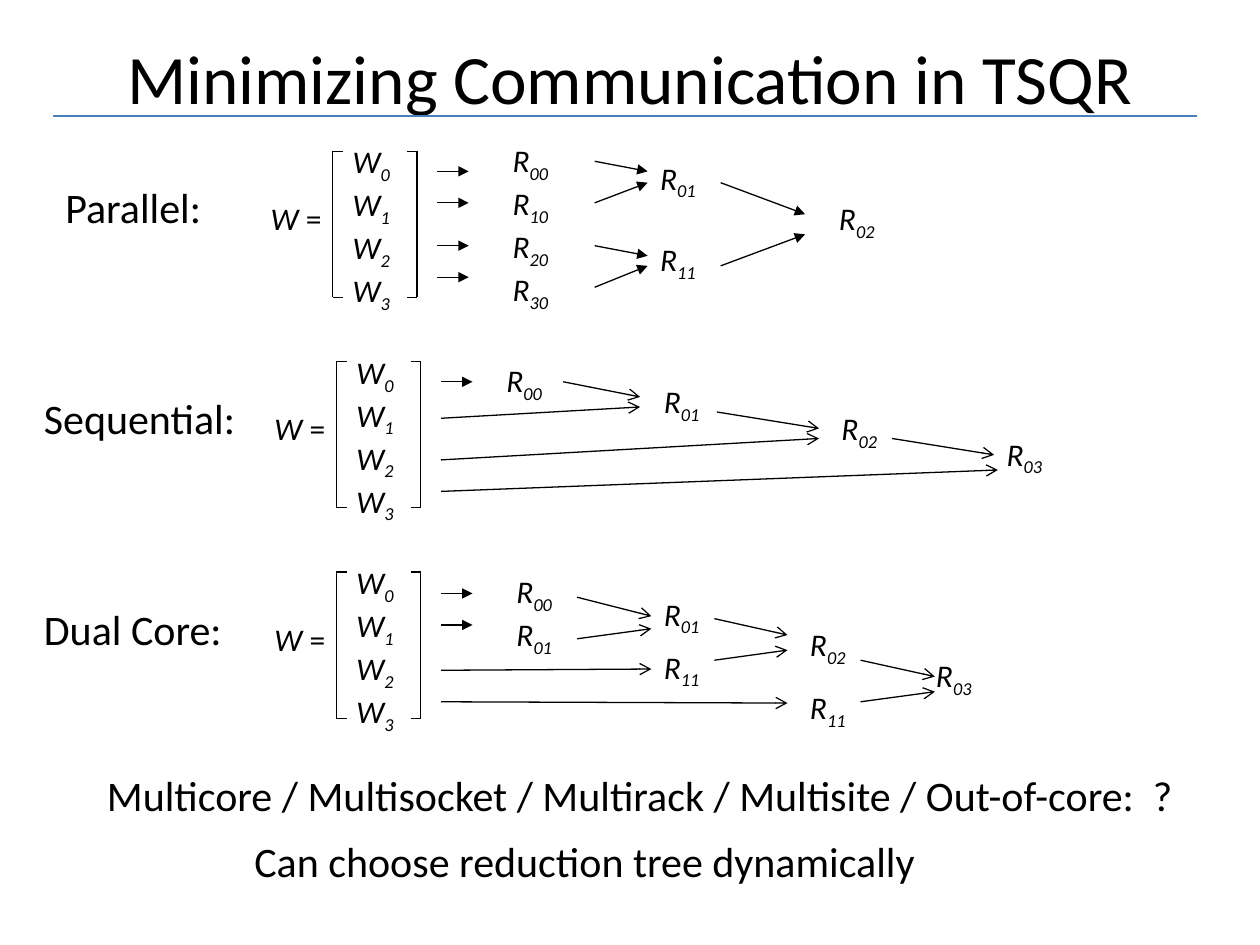
import pptx
import pptx.dml.color
import pptx.enum.shapes
import pptx.enum.text
import pptx.oxml
import pptx.oxml.ns
import pptx.util
from pptx.util import Inches

FONT = "Calibri"
BLACK = "000000"
RULE_COLOR = "4B7EBC"
TITLE = "Minimizing Communication in TSQR"

# Each panel: label box (left, top, width), top left corner of the bracket,
# factors (left, top, subscripts), and arrows (from x, from y, to x, to y) by head.
PANELS = [
    {
        "label": ("Parallel:", 0.42, 1.39, 1.64),
        "bracket": (2.64, 1.2),
        "factors": [
            (3.97, 1.07, ["00", "10", "20", "30"]),
            (5.14, 1.21, ["01"]),
            (5.14, 1.86, ["11"]),
            (6.56, 1.53, ["02"]),
        ],
        "arrows": {
            "triangle": [
                (3.47, 1.36, 3.72, 1.36), (3.47, 1.61, 3.72, 1.61),
                (3.47, 1.95, 3.72, 1.95), (3.47, 2.2, 3.72, 2.2),
                (4.72, 1.28, 5.14, 1.36), (4.72, 1.61, 5.14, 1.45),
                (4.72, 1.95, 5.14, 2.03), (4.72, 2.28, 5.14, 2.11),
                (5.72, 1.45, 6.39, 1.7), (5.72, 2.11, 6.39, 1.86),
            ],
        },
    },
    {
        "label": ("Sequential:", 0.25, 3.07, 2),
        "bracket": (2.67, 2.87),
        "factors": [
            (3.92, 2.82, ["00"]),
            (5.17, 2.98, ["01"]),
            (6.58, 3.2, ["02"]),
            (7.89, 3.4, ["03"]),
        ],
        "arrows": {
            "triangle": [(3.5, 3.03, 3.75, 3.03)],
            "arrow": [
                (4.47, 3.03, 5.08, 3.15), (3.5, 3.32, 5.08, 3.23),
                (5.69, 3.27, 6.5, 3.4), (3.5, 3.65, 6.5, 3.48),
                (7.08, 3.48, 7.89, 3.61), (3.5, 3.9, 7.92, 3.73),
            ],
        },
    },
    {
        "label": ("Dual Core:", 0.25, 4.74, 2.08),
        "bracket": (2.67, 4.54),
        "factors": [
            (4, 4.49, ["00", "01"]),
            (5.17, 4.67, ["01"]),
            (5.17, 5.09, ["11"]),
            (6.33, 4.91, ["02"]),
            (6.33, 5.41, ["11"]),
            (7.33, 5.16, ["03"]),
        ],
        "arrows": {
            "triangle": [(3.5, 4.71, 3.75, 4.71), (3.5, 4.96, 3.75, 4.96)],
            "arrow": [
                (4.58, 4.74, 5.17, 4.89), (4.58, 5.07, 5.17, 4.99),
                (3.5, 5.32, 5.17, 5.31), (3.5, 5.57, 6.25, 5.58),
                (5.67, 4.91, 6.25, 5.04), (5.67, 5.24, 6.25, 5.16),
                (6.83, 5.24, 7.42, 5.37), (6.83, 5.57, 7.42, 5.49),
            ],
        },
    },
]

CLOSING_LINES = [
    ("Can choose reduction tree dynamically", 1.89, 6.58, 5.5, "CENTER"),
    ("Multicore / Multisocket / Multirack / Multisite / Out-of-core:  ?",
     0.75, 6.06, 8.69, "LEFT"),
]

BRACKET_WIDTH, BRACKET_HEIGHT, BRACKET_ARM = 0.67, 1.16, 0.08


def rgb(color):
    return pptx.dml.color.RGBColor.from_string(color)


def add_run(paragraph, text, size, italic=False, subscript=False):
    run = paragraph.add_run()
    run.text = text
    run.font.name = FONT
    run.font.size = pptx.util.Pt(size)
    run.font.italic = italic
    run.font.color.rgb = rgb(BLACK)
    if subscript:
        run.font._element.set("baseline", "-25000")


def add_text(shapes, left, top, width, height, wrap=False):
    """Add an empty text box and return its text frame."""
    box = shapes.add_textbox(Inches(left), Inches(top), Inches(width), Inches(height))
    box.text_frame.word_wrap = wrap
    return box.text_frame


def add_line(shapes, x1, y1, x2, y2, color=BLACK, head=None):
    line = shapes.add_connector(
        pptx.enum.shapes.MSO_CONNECTOR.STRAIGHT,
        Inches(x1), Inches(y1), Inches(x2), Inches(y2))
    line.line.color.rgb = rgb(color)
    line.line.width = pptx.util.Pt(0.75)
    if head:
        tail_end = pptx.oxml.parse_xml(
            f'<a:tailEnd {pptx.oxml.ns.nsdecls("a")} type="{head}"/>')
        line.line._get_or_add_ln().append(tail_end)
    line._element.spPr.append(
        pptx.oxml.parse_xml(f'<a:effectLst {pptx.oxml.ns.nsdecls("a")}/>'))


def add_symbols(shapes, letter, subscripts, left, top):
    """Stack one subscripted letter per paragraph."""
    height = 0.1 + 0.34 * len(subscripts)
    frame = add_text(shapes, left, top, 0.55, height)
    for index, subscript in enumerate(subscripts):
        paragraph = frame.add_paragraph() if index else frame.paragraphs[0]
        add_run(paragraph, letter, 18, italic=True)
        add_run(paragraph, subscript, 18, italic=True, subscript=True)


def add_matrix(shapes, left, top):
    """Draw W = [W0 ... W3] with the bracket's corner at left, top."""
    paragraph = add_text(shapes, left - 0.59, top + 0.33, 0.75, 0.44, True).paragraphs[0]
    add_run(paragraph, "W", 18, italic=True)
    add_run(paragraph, " =", 18)
    add_symbols(shapes, "W", ["0", "1", "2", "3"], left + 0.06, top - 0.12)
    bottom = top + BRACKET_HEIGHT
    for x, arm in ((left, BRACKET_ARM), (left + BRACKET_WIDTH, -BRACKET_ARM)):
        add_line(shapes, x, top, x, bottom)
        for y in (top, bottom):
            add_line(shapes, x, y, x + arm, y)


def add_panel(slide, panel):
    shapes = slide.shapes.add_group_shape().shapes
    label, left, top, width = panel["label"]
    add_run(add_text(shapes, left, top, width, 0.5, True).paragraphs[0], label, 24)
    add_matrix(shapes, *panel["bracket"])
    for left, top, subscripts in panel["factors"]:
        add_symbols(shapes, "R", subscripts, left, top)
    for head, arrows in panel["arrows"].items():
        for arrow in arrows:
            add_line(shapes, *arrow, head=head)


def main():
    presentation = pptx.Presentation()
    presentation.slide_width, presentation.slide_height = Inches(10), Inches(7.5)
    slide = presentation.slides.add_slide(presentation.slide_layouts[5])

    title = slide.shapes.title
    title.left, title.top = Inches(0.5), Inches(0.3)
    title.width, title.height = Inches(9), Inches(0.62)
    title.text_frame.vertical_anchor = pptx.enum.text.MSO_ANCHOR.MIDDLE
    title.text_frame.auto_size = pptx.enum.text.MSO_AUTO_SIZE.NONE
    title.text_frame.paragraphs[0].alignment = pptx.enum.text.PP_ALIGN.CENTER
    add_run(title.text_frame.paragraphs[0], TITLE, 39.6)

    for panel in PANELS:
        add_panel(slide, panel)
    for text, left, top, width, alignment in CLOSING_LINES:
        paragraph = add_text(slide.shapes, left, top, width, 0.5).paragraphs[0]
        paragraph.alignment = pptx.enum.text.PP_ALIGN[alignment]
        add_run(paragraph, text, 24)
    add_line(slide.shapes, 0.42, 0.92, 9.5, 0.92, RULE_COLOR)

    presentation.save("out.pptx")


if __name__ == "__main__":
    main()
